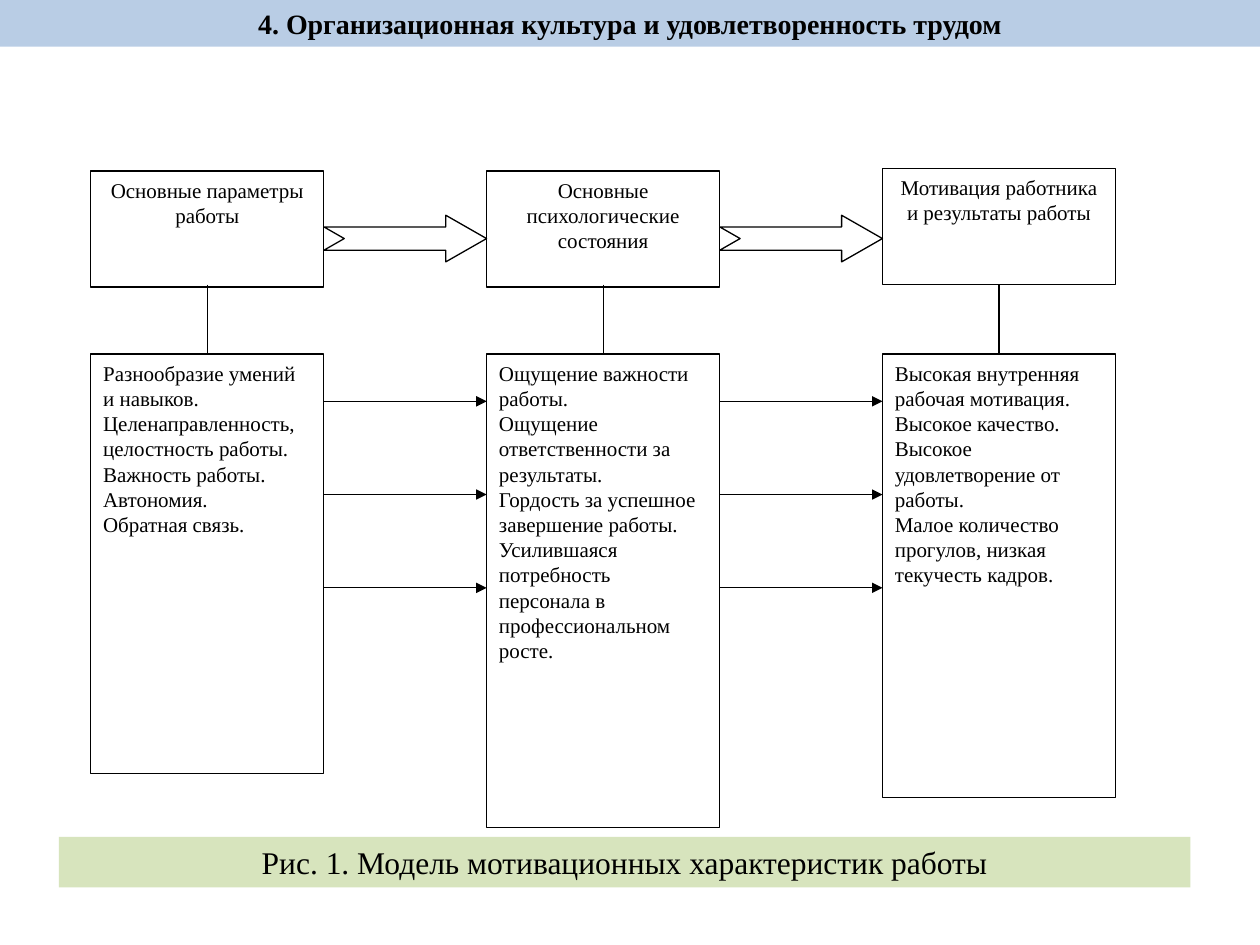
from lxml.etree import SubElement
from pptx import Presentation
from pptx.dml.color import RGBColor
from pptx.enum.shapes import MSO_CONNECTOR as Connector, MSO_SHAPE as Shape
from pptx.enum.text import MSO_ANCHOR as Anchor, MSO_AUTO_SIZE as AutoSize, PP_ALIGN as Align
from pptx.oxml.ns import qn
from pptx.util import Cm, Pt

BLACK = RGBColor(0x00, 0x00, 0x00)
WHITE = RGBColor(0xFF, 0xFF, 0xFF)
BLUE = RGBColor(0xB9, 0xCD, 0xE5)
GREEN = RGBColor(0xD7, 0xE4, 0xBD)

LEFT, PITCH, WIDTH = 1.83, 7.98, 4.7
GAP = PITCH - WIDTH
HEAD_HEIGHT, HEAD_BOTTOM, LIST_TOP = 2.34, 5.74, 7.14
ARROW_TOP, ARROW_HEIGHT = 4.34, 0.94
FLOW_TOP, FLOW_STEP = 8.09, 1.88

COLUMNS = [
    (3.45, "Основные параметры работы", 8.46, [
        "Разнообразие умений и навыков.",
        "Целенаправленность, целостность работы.",
        "Важность работы.",
        "Автономия.",
        "Обратная связь.",
    ]),
    (3.45, "Основные психологические состояния", 9.55, [
        "Ощущение важности работы.",
        "Ощущение ответственности за результаты.",
        "Гордость за успешное завершение работы.",
        "Усилившаяся потребность персонала в профессиональном росте.",
    ]),
    (3.4, "Мотивация работника и результаты работы", 8.94, [
        "Высокая внутренняя рабочая мотивация.",
        "Высокое качество.",
        "Высокое удовлетворение от работы.",
        "Малое количество прогулов, низкая текучесть кадров.",
    ]),
]


class Diagram:
    """Draws the elements of the motivation model on one slide in one style."""

    font = "Times New Roman"
    line_width = Pt(0.75)

    def __init__(self, slide):
        self.slide = slide

    def set_text(self, shape, lines, size, align, anchor=Anchor.TOP, bold=False):
        frame = shape.text_frame
        frame.text = "\n".join(lines)
        frame.word_wrap = True
        frame.auto_size = AutoSize.NONE
        frame.vertical_anchor = anchor
        for para in frame.paragraphs:
            para.alignment = align
            for span in para.runs:
                span.font.name = self.font
                span.font.size = Pt(size)
                span.font.bold = bold
                span.font.color.rgb = BLACK

    def fill(self, shape, color):
        shape.fill.solid()
        shape.fill.fore_color.rgb = color

    def outline(self, shape):
        shape.line.color.rgb = BLACK
        shape.line.width = self.line_width

    def title(self, text, height):
        title = self.slide.shapes.title
        title.left, title.top, title.width, title.height = Cm(0), Cm(0), Cm(25.4), Cm(height)
        self.fill(title, BLUE)
        self.set_text(title, [text], 16, Align.CENTER, Anchor.MIDDLE, bold=True)

    def shape(self, kind, left, top, width, height, color=WHITE):
        shape = self.slide.shapes.add_shape(kind, Cm(left), Cm(top), Cm(width), Cm(height))
        shape.shadow.inherit = False
        self.fill(shape, color)
        return shape

    def box(self, left, top, height, lines, align):
        box = self.shape(Shape.RECTANGLE, left, top, WIDTH, height)
        self.outline(box)
        self.set_text(box, lines, 12, align)

    def block_arrow(self, left):
        arrow = self.shape(Shape.NOTCHED_RIGHT_ARROW, left, ARROW_TOP, GAP, ARROW_HEIGHT)
        arrow.adjustments[0], arrow.adjustments[1] = 0.5, 0.875
        self.outline(arrow)

    def line(self, x1, y1, x2, y2, arrow=False):
        line = self.slide.shapes.add_connector(Connector.STRAIGHT, Cm(x1), Cm(y1), Cm(x2), Cm(y2))
        self.outline(line)
        properties = line.element.spPr
        if arrow:
            SubElement(properties.find(qn("a:ln")), qn("a:tailEnd"), type="triangle")
        SubElement(properties, qn("a:effectLst"))

    def caption(self, text):
        caption = self.shape(Shape.RECTANGLE, 1.19, 16.87, 22.81, 1.02, GREEN)
        caption.line.fill.background()
        self.set_text(caption, [text], 18, Align.CENTER, Anchor.MIDDLE)


def main():
    deck = Presentation()
    deck.slide_width, deck.slide_height = Cm(25.4), Cm(19.05)
    page = deck.slides.add_slide(deck.slide_layouts[5])
    diagram = Diagram(page)

    diagram.title("4. Организационная культура и удовлетворенность трудом", 0.94)
    for index, (top, heading, height, items) in enumerate(COLUMNS):
        left = LEFT + index * PITCH
        middle = left + WIDTH / 2
        diagram.box(left, top, HEAD_HEIGHT, [heading], Align.CENTER)
        diagram.box(left, LIST_TOP, height, items, Align.LEFT)
        diagram.line(middle, HEAD_BOTTOM, middle, LIST_TOP)

    for index in range(len(COLUMNS) - 1):
        start = LEFT + index * PITCH + WIDTH
        diagram.block_arrow(start)
        for row in range(3):
            level = FLOW_TOP + row * FLOW_STEP
            diagram.line(start, level, start + GAP, level, arrow=True)

    diagram.caption("Рис. 1. Модель мотивационных характеристик работы")
    deck.save("out.pptx")


if __name__ == "__main__":
    main()
